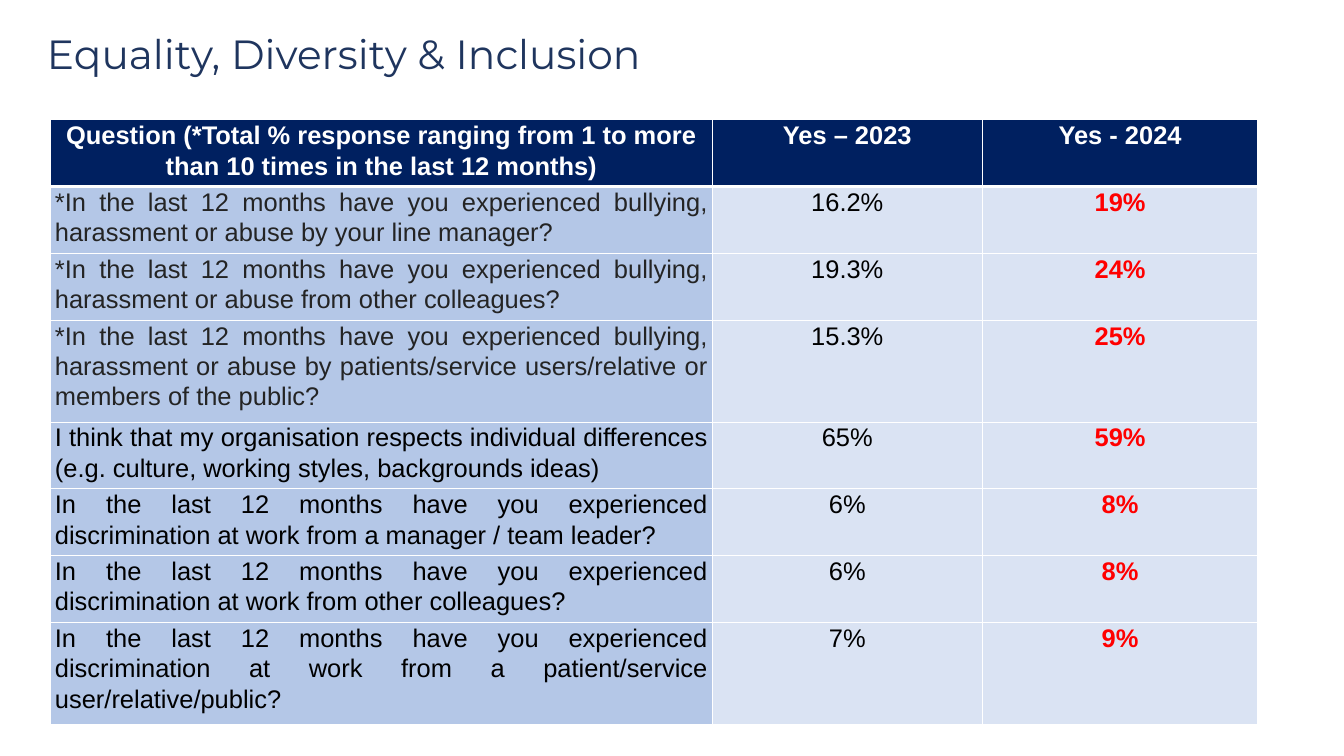
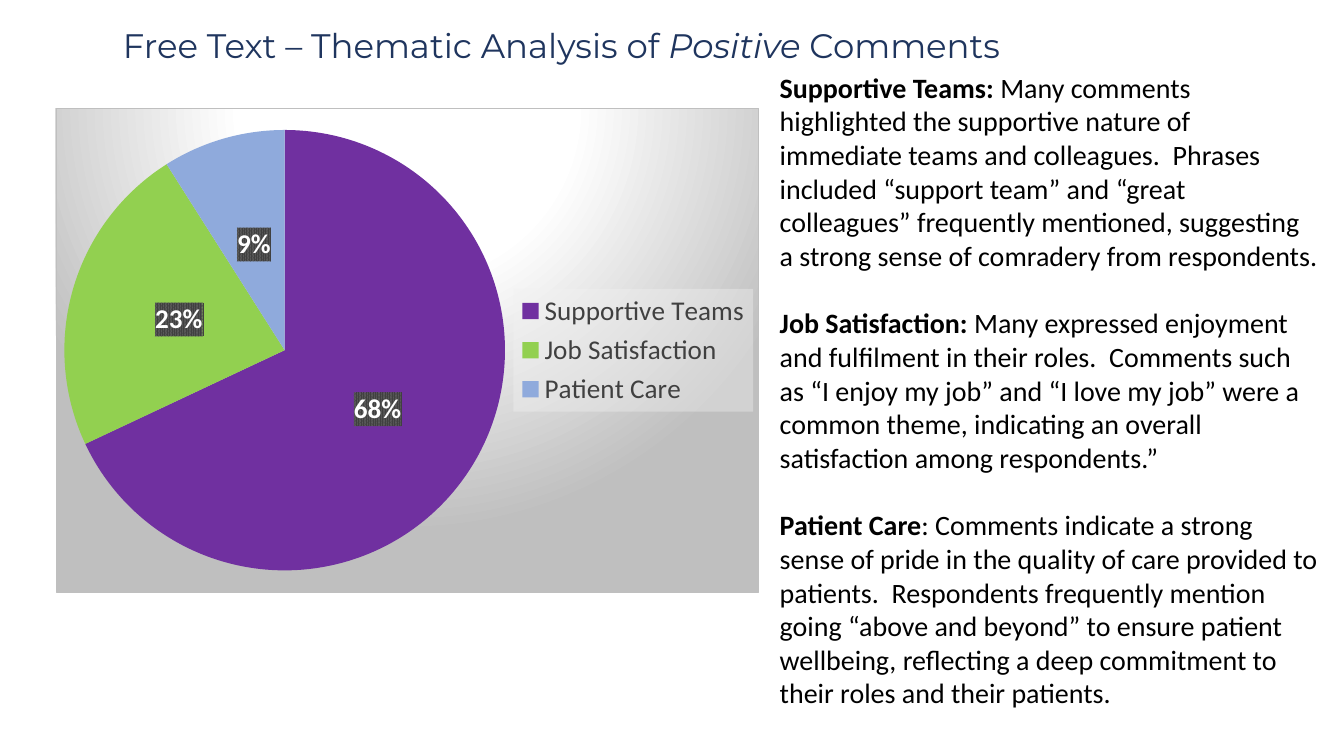
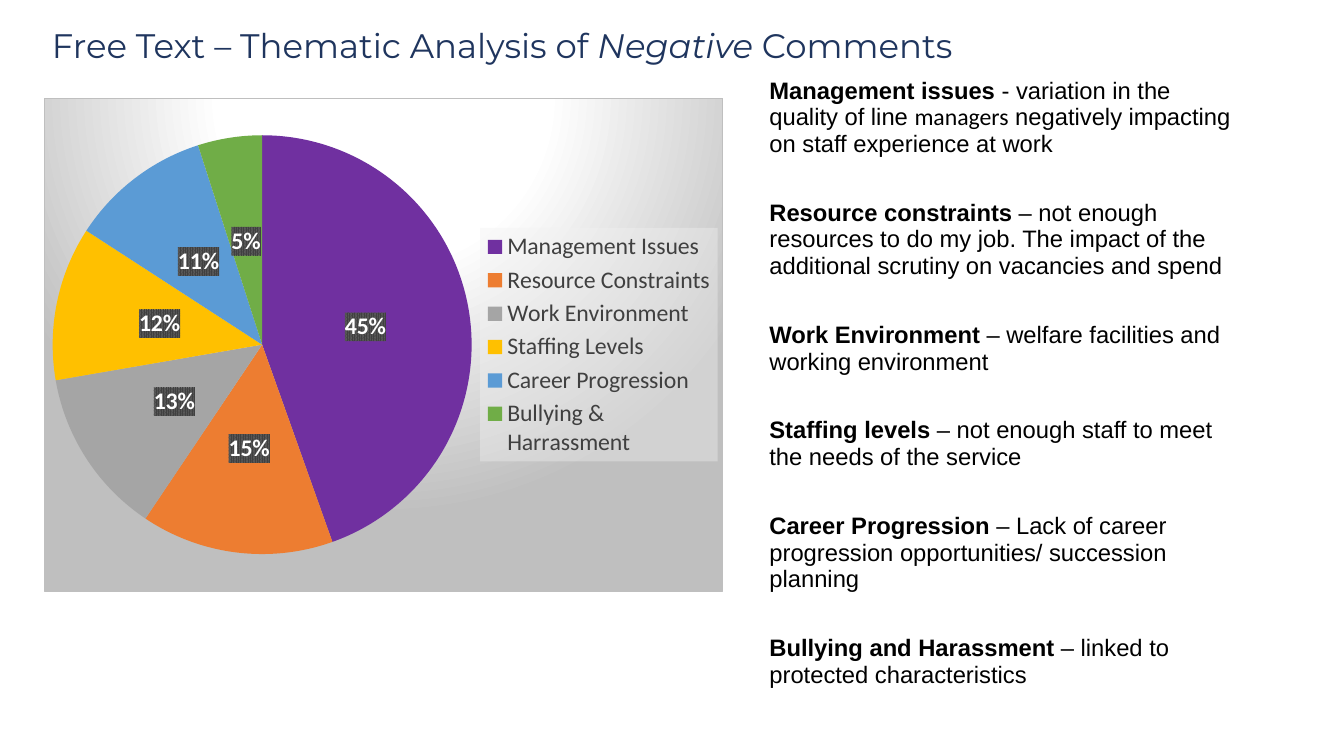
from lxml import etree
from pptx import Presentation
from pptx.chart.data import CategoryChartData
from pptx.dml.color import RGBColor
from pptx.enum.chart import XL_CHART_TYPE as ChartType
from pptx.enum.chart import XL_LABEL_POSITION as LabelPosition
from pptx.enum.chart import XL_LEGEND_POSITION as LegendPosition
from pptx.enum.text import MSO_ANCHOR as Anchor
from pptx.enum.text import PP_ALIGN as Align
from pptx.oxml import parse_xml
from pptx.oxml.ns import nsdecls, qn
from pptx.util import Inches, Pt

SLIDE_WIDTH, SLIDE_HEIGHT = Inches(21.99), Inches(12.37)
BLANK_LAYOUT = 6

TITLE_FONT, TABLE_FONT, CHART_FONT = "Montserrat", "Arial", "Calibri"
TITLE_COLOUR = "1F355E"
WHITE, BLACK, RED, CHARCOAL = "FFFFFF", "000000", "FF0000", "242424"
HEADER_FILL, QUESTION_FILL, ANSWER_FILL = "002060", "B4C7E7", "DAE3F3"
LEGEND_TEXT, PURPLE = "404040", "7030A0"
BOLD, ITALIC = {"bold": True}, {"italic": True}

COLUMN_SHARES = (0.548, 0.224, 0.228)
TWO_LINES, THREE_LINES = 1.09, 1.66
HEADERS = (
    "Question (*Total % response ranging from 1 to more than 10 times in the last 12 months)",
    "Yes – 2023",
    "Yes - 2024",
)
ABUSE = "*In the last 12 months have you experienced bullying, harassment or abuse "
DISCRIMINATION = "In the last 12 months have you experienced discrimination at work from "
SURVEY = (
    (ABUSE + "by your line manager?", "16.2%", "19%", TWO_LINES),
    (ABUSE + "from other colleagues?", "19.3%", "24%", TWO_LINES),
    (ABUSE + "by patients/service users/relative or members of the public?",
     "15.3%", "25%", THREE_LINES),
    ("I think that my organisation respects individual differences "
     "(e.g. culture, working styles, backgrounds ideas)", "65%", "59%", TWO_LINES),
    (DISCRIMINATION + "a manager / team leader?", "6%", "8%", TWO_LINES),
    (DISCRIMINATION + "other colleagues?", "6%", "8%", TWO_LINES),
    (DISCRIMINATION + "a patient/service user/relative/public?",
     "7%", "9%", THREE_LINES),
)

POSITIVE_THEMES = (
    ("Supportive Teams", 68, PURPLE),
    ("Job Satisfaction", 23, "92D050"),
    ("Patient Care", 9, "8FAADC"),
)
POSITIVE_COMMENTS = (
    (("Supportive Teams: ", BOLD),
     ("Many comments highlighted the supportive nature of immediate teams and "
      "colleagues.  Phrases included “support team” and “great colleagues” frequently "
      "mentioned, suggesting a strong sense of comradery from respondents.", {})),
    (("Job Satisfaction: ", BOLD),
     ("Many expressed enjoyment and fulfilment in their roles.  Comments such as "
      "“I enjoy my job” and “I love my job” were a common theme, indicating an overall "
      "satisfaction among respondents.”", {})),
    (("Patient Care", BOLD),
     (": Comments indicate a strong sense of pride in the quality of care provided to "
      "patients.  Respondents frequently mention going “above and beyond” to ensure "
      "patient wellbeing, reflecting a deep commitment to their roles and their "
      "patients.", {})),
)

NEGATIVE_THEMES = (
    ("Management Issues", 45, PURPLE),
    ("Resource Constraints", 15, "ED7D31"),
    ("Work Environment", 13, "A5A5A5"),
    ("Staffing Levels", 12, "FFC000"),
    ("Career Progression", 11, "5B9BD5"),
    ("Bullying & Harrassment", 5, "70AD47"),
)
NEGATIVE_COMMENTS = (
    (("Management issues ", BOLD),
     ("- variation in the quality of line ", {}),
     ("managers", {"name": "Calibri"}),
     (" negatively impacting on staff experience at work", {})),
    (("Resource constraints ", BOLD),
     ("– not enough resources to do my job. The impact of the additional scrutiny on "
      "vacancies and spend", {})),
    (("Work Environment ", BOLD),
     ("– welfare facilities and working environment", {})),
    (("Staffing levels ", BOLD),
     ("– not enough staff to meet the needs of the service", {})),
    (("Career Progression ", BOLD),
     ("– Lack of career progression opportunities/ succession planning", {})),
    (("Bullying and Harassment ", BOLD),
     ("– linked to protected characteristics", {})),
)


def colour(hex_string):
    return RGBColor.from_string(hex_string)


def box(left, top, width, height):
    """Turn percentages of the slide's size into lengths."""
    return (int(SLIDE_WIDTH * left / 100), int(SLIDE_HEIGHT * top / 100),
            int(SLIDE_WIDTH * width / 100), int(SLIDE_HEIGHT * height / 100))


def style_font(font, name, size, hex_string, bold=False):
    font.name = name
    font.size = Pt(size)
    font.bold = bold
    font.color.rgb = colour(hex_string)


def add_text(slide, area, paragraphs, font_name, size, hex_string=BLACK,
             line_spacing=1.0, gap=0):
    """Add a text box; each paragraph is a series of (text, font overrides)."""
    text_frame = slide.shapes.add_textbox(*area).text_frame
    text_frame.word_wrap = True
    for index, runs in enumerate(paragraphs):
        paragraph = text_frame.add_paragraph() if index else text_frame.paragraphs[0]
        paragraph.line_spacing = line_spacing
        paragraph.space_before = Pt(gap if index else 0)
        for text, overrides in runs:
            run = paragraph.add_run()
            run.text = text
            style_font(run.font, font_name, size, hex_string)
            for attribute, value in overrides.items():
                setattr(run.font, attribute, value)


def add_title(slide, area, runs, size):
    add_text(slide, area, [runs], TITLE_FONT, size, TITLE_COLOUR, line_spacing=0.9)


def set_borders(cell, bottom_width):
    properties = cell._tc.get_or_add_tcPr()
    widths = {"lnL": 1, "lnR": 1, "lnT": 1, "lnB": bottom_width}
    for index, (side, width) in enumerate(widths.items()):
        properties.insert(index, parse_xml(
            f'<a:{side} {nsdecls("a")} w="{Pt(width)}"><a:solidFill>'
            f'<a:srgbClr val="{WHITE}"/></a:solidFill></a:{side}>'))


def fill_cell(cell, text, fill, hex_string, bold=False, align=Align.CENTER,
              bottom_width=1):
    cell.fill.solid()
    cell.fill.fore_color.rgb = colour(fill)
    cell.margin_left = cell.margin_right = Inches(0.07)
    cell.margin_top = cell.margin_bottom = 0
    cell.vertical_anchor = Anchor.TOP
    cell.text_frame.text = text
    paragraph = cell.text_frame.paragraphs[0]
    paragraph.alignment = align
    paragraph.line_spacing = 1.07
    style_font(paragraph.runs[0].font, TABLE_FONT, 30, hex_string, bold)
    set_borders(cell, bottom_width)


def add_survey_table(slide, area):
    width, height = area[2:]
    table = slide.shapes.add_table(len(SURVEY) + 1, len(HEADERS), *area).table
    table.horz_banding = False
    for column, share in zip(table.columns, COLUMN_SHARES):
        column.width = int(width * share)
    weights = [TWO_LINES] + [row[-1] for row in SURVEY]
    for row, weight in zip(table.rows, weights):
        row.height = int(height * weight / sum(weights))
    for column, header in enumerate(HEADERS):
        fill_cell(table.cell(0, column), header, HEADER_FILL, WHITE, bold=True,
                  bottom_width=3)
    for row, (question, earlier, latest, _) in enumerate(SURVEY, start=1):
        question_colour = CHARCOAL if question.startswith("*") else BLACK
        fill_cell(table.cell(row, 0), question, QUESTION_FILL, question_colour,
                  align=Align.JUSTIFY)
        fill_cell(table.cell(row, 1), earlier, ANSWER_FILL, BLACK)
        fill_cell(table.cell(row, 2), latest, ANSWER_FILL, RED, bold=True)


def chart_properties(content):
    return parse_xml(f'<c:spPr {nsdecls("c", "a")}>{content}</c:spPr>')


def paint_chart_backgrounds(chart, legend, labels):
    """Give the chart a radial gradient, the legend a veil and the labels a pattern."""
    stops = "".join(
        f'<a:gs pos="{position}000"><a:srgbClr val="{value}"/></a:gs>'
        for position, value in ((0, WHITE), (39, WHITE), (100, "BFBFBF")))
    space = chart._chartSpace
    chart_element = space.find(qn("c:chart"))
    corners = etree.Element(qn("c:roundedCorners"), val="0")
    chart_element.addprevious(corners)
    chart_element.addnext(chart_properties(
        f'<a:gradFill><a:gsLst>{stops}</a:gsLst><a:path path="circle">'
        '<a:fillToRect l="50000" t="-80000" r="50000" b="180000"/></a:path></a:gradFill>'
        f'<a:ln w="{Pt(0.75)}"><a:solidFill><a:srgbClr val="BFBFBF"/></a:solidFill></a:ln>'))
    legend._element.find(qn("c:overlay")).addnext(chart_properties(
        '<a:solidFill><a:srgbClr val="F2F2F2"><a:alpha val="39000"/></a:srgbClr></a:solidFill>'))
    labels._element.find(qn("c:txPr")).addprevious(chart_properties(
        '<a:pattFill prst="pct75"><a:fgClr><a:srgbClr val="404040"/></a:fgClr>'
        '<a:bgClr><a:srgbClr val="595959"/></a:bgClr></a:pattFill>'))


def add_theme_pie(slide, area, themes, size):
    names, values, colours = zip(*themes)
    data = CategoryChartData()
    data.categories = names
    data.add_series("Series 1", values)
    chart = slide.shapes.add_chart(ChartType.PIE, *area, data).chart
    chart.has_title = False
    style_font(chart.font, CHART_FONT, size, BLACK)

    chart.has_legend = True
    legend = chart.legend
    legend.position = LegendPosition.RIGHT
    legend.include_in_layout = False
    style_font(legend.font, CHART_FONT, size, LEGEND_TEXT)

    plot = chart.plots[0]
    plot.vary_by_categories = True
    series = plot.series[0]
    for index, hex_string in enumerate(colours):
        fill = series.points[index].format.fill
        fill.solid()
        fill.fore_color.rgb = colour(hex_string)

    labels = series.data_labels
    labels.show_percentage = True
    labels.show_value = False
    labels.number_format = "0%"
    labels.number_format_is_linked = False
    labels.position = LabelPosition.CENTER
    style_font(labels.font, CHART_FONT, size, WHITE, bold=True)
    paint_chart_backgrounds(chart, legend, labels)


def new_slide(presentation):
    return presentation.slides.add_slide(presentation.slide_layouts[BLANK_LAYOUT])


def build_equality_slide(presentation):
    slide = new_slide(presentation)
    add_title(slide, box(3.05, 4.2, 88.04, 3.4),
              [("Equality, Diversity & Inclusion", {})], 48)
    add_survey_table(slide, box(3.77, 15.84, 89.81, 79.95))


def build_comments_slide(presentation, mood, title_area, chart_area, themes,
                         chart_size, text_area, comments, **text_style):
    slide = new_slide(presentation)
    title = [("Free Text – Thematic Analysis of ", {}), (mood, ITALIC), (" Comments", {})]
    add_title(slide, title_area, title, 40)
    add_text(slide, text_area, comments, **text_style)
    add_theme_pie(slide, chart_area, themes, chart_size)


def main():
    presentation = Presentation()
    presentation.slide_width, presentation.slide_height = SLIDE_WIDTH, SLIDE_HEIGHT
    build_equality_slide(presentation)
    build_comments_slide(
        presentation, "Positive", box(8.69, 3.48, 78.94, 2.02),
        box(4.14, 14.31, 52.3, 64.03), POSITIVE_THEMES, 32,
        box(57.57, 8.89, 40.93, 88), POSITIVE_COMMENTS,
        font_name="Calibri", size=33, gap=40)
    build_comments_slide(
        presentation, "Negative", box(3.41, 3.48, 81.58, 3.4),
        box(3.27, 12.93, 50.52, 65.32), NEGATIVE_THEMES, 28,
        box(56.8, 9.94, 36.02, 80.19), NEGATIVE_COMMENTS,
        font_name="Arial", size=28, line_spacing=0.93, gap=50)
    presentation.save("out.pptx")


if __name__ == "__main__":
    main()
